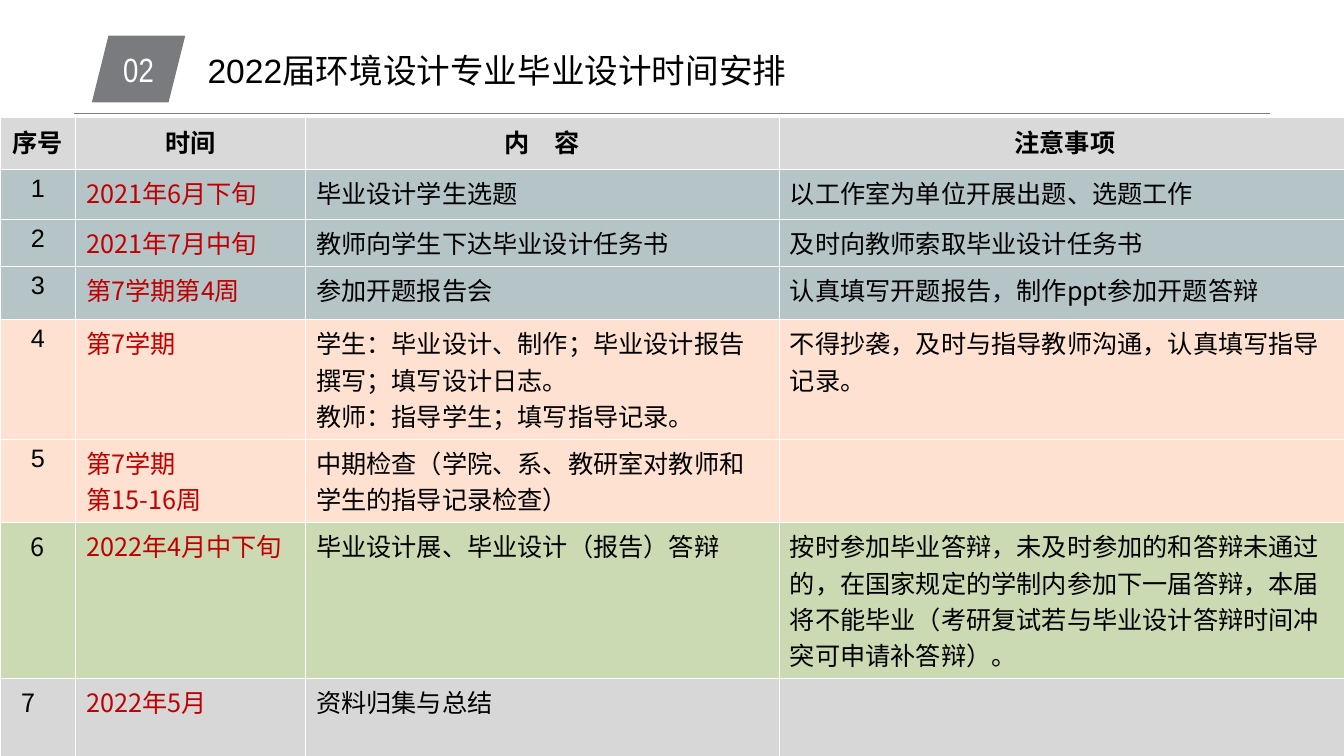
"""Build the graduation design timetable slide."""
from lxml.etree import SubElement
from pptx import Presentation
from pptx.dml.color import RGBColor
from pptx.enum.shapes import MSO_CONNECTOR, MSO_SHAPE
from pptx.enum.text import MSO_ANCHOR, MSO_AUTO_SIZE, PP_ALIGN
from pptx.oxml.ns import qn
from pptx.util import Pt

COLORS = {
    "black": "000000", "white": "FFFFFF", "rule": "808080", "badge": "797B7E",
    "date": "C00000", "header": "D9D9D9", "blue": "B5C4C7",
    "orange": "FEE1D1", "green": "CCDAB3", "gray": "D7D7D8",
}
CHINESE_FONT = "Noto Sans CJK SC"


def color(name):
    return RGBColor.from_string(COLORS[name])


def format_paragraph(paragraph, size, font_name, color_name, alignment, bold=False):
    font = paragraph.font
    font.size = Pt(size)
    font.bold = bold
    font.color.rgb = color(color_name)
    font.name = font_name
    latin = paragraph._p.pPr.find(qn("a:defRPr")).find(qn("a:latin"))
    east_asian = SubElement(latin.getparent(), qn("a:ea"), typeface=CHINESE_FONT)
    latin.addnext(east_asian)
    paragraph.alignment = alignment


presentation = Presentation()
presentation.slide_width = Pt(960)
presentation.slide_height = Pt(540)
slide = presentation.slides.add_slide(presentation.slide_layouts[5])

rule = slide.shapes.add_connector(
    MSO_CONNECTOR.STRAIGHT, Pt(52.8), Pt(80.9), Pt(907.2), Pt(80.9))
rule.line.color.rgb = color("rule")
rule.line.width = Pt(0.25)
SubElement(rule._element.spPr, qn("a:effectLst"))

title = slide.shapes.title
title.left, title.top, title.width, title.height = Pt(108.7), Pt(31.7), Pt(492.5), Pt(36)
title.text_frame.text = "2022届环境设计专业毕业设计时间安排"
title.text_frame.auto_size = MSO_AUTO_SIZE.NONE
title.text_frame.vertical_anchor = MSO_ANCHOR.MIDDLE
format_paragraph(title.text_frame.paragraphs[0], 24, "Arial", "black", PP_ALIGN.CENTER)

badge = slide.shapes.add_shape(
    MSO_SHAPE.PARALLELOGRAM, Pt(66.2), Pt(25.9), Pt(65.5), Pt(46.8))
badge.shadow.inherit = False
badge.fill.solid()
badge.fill.fore_color.rgb = color("badge")
badge.line.color.rgb = color("badge")
badge.line.width = Pt(1)
badge.text_frame.text = "02"
badge.text_frame.word_wrap = False
badge.text_frame.vertical_anchor = MSO_ANCHOR.MIDDLE
format_paragraph(badge.text_frame.paragraphs[0], 24, "Arial Narrow", "white", PP_ALIGN.CENTER)

rows = [
    (36.7, "header", ["序号", "时间", "内　容", "注意事项"]),
    (36, "blue", ["1", "2021年6月下旬", "毕业设计学生选题", "以工作室为单位开展出题、选题工作"]),
    (33.1, "blue", ["2", "2021年7月中旬", "教师向学生下达毕业设计任务书",
                    "及时向教师索取毕业设计任务书"]),
    (38.2, "blue", ["3", "第7学期第4周", "参加开题报告会",
                    "认真填写开题报告，制作ppt参加开题答辩"]),
    (78.5, "orange", ["4", "第7学期",
                      "学生：毕业设计、制作；毕业设计报告撰写；填写设计日志。\n"
                      "教师：指导学生；填写指导记录。",
                      "不得抄袭，及时与指导教师沟通，认真填写指导记录。"]),
    (58.3, "orange", ["5", "第7学期\n第15-16周",
                      "中期检查（学院、系、教研室对教师和学生的指导记录检查）", ""]),
    (105.8, "green", ["6", "2022年4月中下旬", "毕业设计展、毕业设计（报告）答辩",
                      "按时参加毕业答辩，未及时参加的和答辩未通过的，在国家规定的学制内"
                      "参加下一届答辩，本届将不能毕业（考研复试若与毕业设计答辩时间冲突"
                      "可申请补答辩）。"]),
    (57.6, "gray", ["7", "2022年5月", "资料归集与总结", ""]),
]
column_widths = [54, 164.2, 338.4, 408.2]
table_height = sum(height for height, fill, texts in rows)
table = slide.shapes.add_table(
    len(rows), len(column_widths), Pt(0), Pt(84.2),
    Pt(sum(column_widths)), Pt(table_height)).table
table.horz_banding = False
for column, width in zip(table.columns, column_widths):
    column.width = Pt(width)

for row_index, (height, fill, texts) in enumerate(rows):
    table.rows[row_index].height = Pt(height)
    is_header = row_index == 0
    for column_index, text in enumerate(texts):
        cell = table.cell(row_index, column_index)
        cell.margin_left = cell.margin_right = Pt(7.6)
        cell.margin_top = cell.margin_bottom = Pt(3.6)
        cell.fill.solid()
        cell.fill.fore_color.rgb = color(fill)
        cell.text = text
        is_number = column_index == 0 and not is_header
        font_name = "Arial" if is_number and row_index <= 5 else CHINESE_FONT
        text_color = "date" if column_index == 1 and not is_header else "black"
        centered = is_header or (is_number and row_index <= 6)
        alignment = PP_ALIGN.CENTER if centered else PP_ALIGN.LEFT
        for paragraph in cell.text_frame.paragraphs:
            format_paragraph(paragraph, 18, font_name, text_color, alignment, is_header)

table.cell(7, 0).margin_left = Pt(15.5)

presentation.save("out.pptx")
